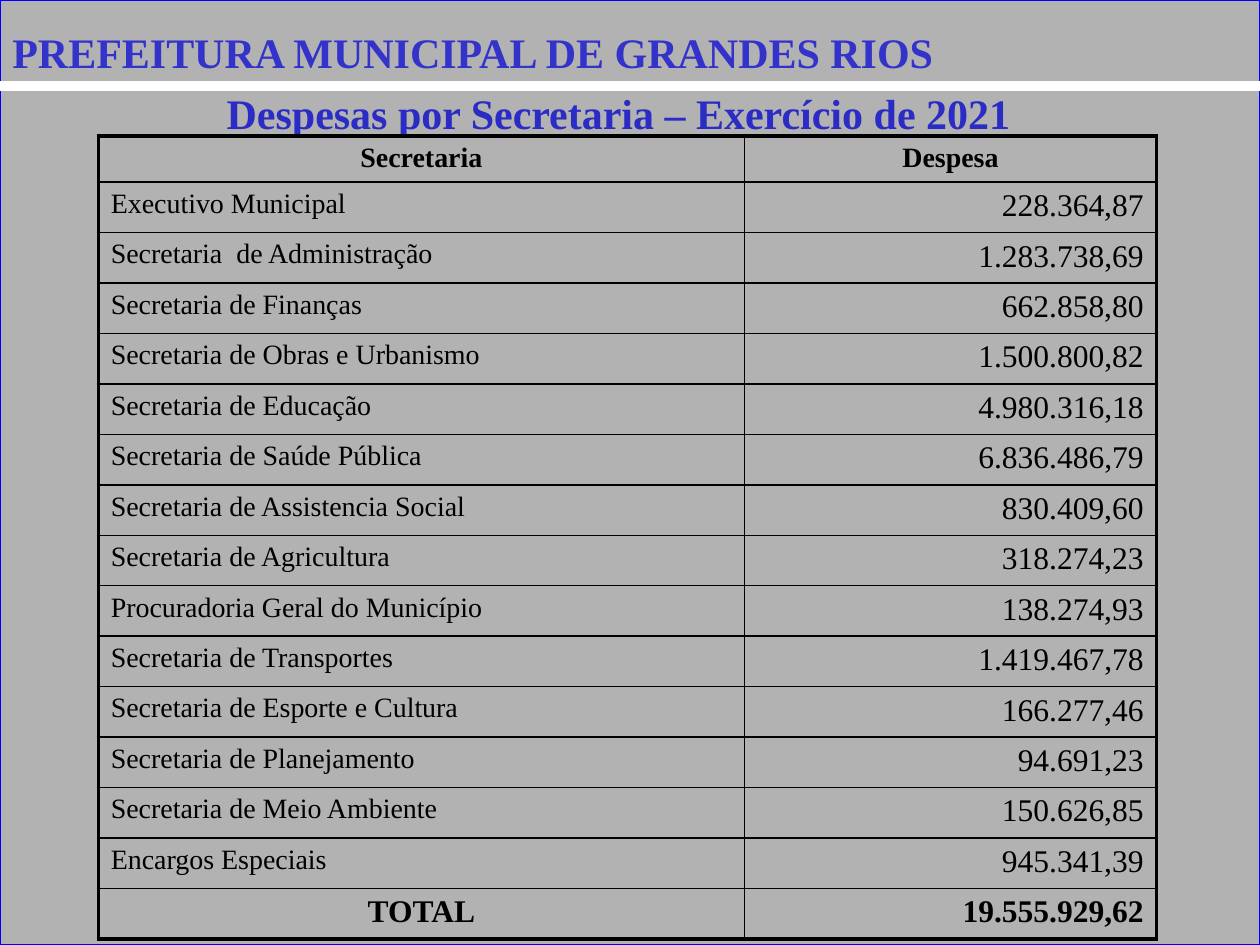
from lxml.etree import SubElement
from pptx import Presentation
from pptx.dml.color import RGBColor
from pptx.enum.shapes import MSO_CONNECTOR as Connector, MSO_SHAPE as Shape
from pptx.enum.text import PP_ALIGN as Align
from pptx.oxml.ns import qn
from pptx.util import Cm, Pt

HEADING = "PREFEITURA MUNICIPAL DE GRANDES RIOS"
SUBTITLE = "Despesas por Secretaria – Exercício de 2021 "
HEADER = ("Secretaria", "Despesa")
EXPENSES = [
    ("Executivo Municipal", "228.364,87"),
    ("Secretaria  de Administração", "1.283.738,69"),
    ("Secretaria de Finanças", "662.858,80"),
    ("Secretaria de Obras e Urbanismo", "1.500.800,82"),
    ("Secretaria de Educação", "4.980.316,18"),
    ("Secretaria de Saúde Pública", "6.836.486,79"),
    ("Secretaria de Assistencia Social", "830.409,60"),
    ("Secretaria de Agricultura", "318.274,23"),
    ("Procuradoria Geral do Município", "138.274,93"),
    ("Secretaria de Transportes", "1.419.467,78"),
    ("Secretaria de Esporte e Cultura", "166.277,46"),
    ("Secretaria de Planejamento", "94.691,23"),
    ("Secretaria de Meio Ambiente", "150.626,85"),
    ("Encargos Especiais", "945.341,39"),
]
TOTAL = ("TOTAL", "19.555.929,62")

FONT = "Times New Roman"
COLUMN_WIDTHS = (13.03, 8.3)
HEADER_HEIGHT, TABLE_HEIGHT = 0.93, 16.18
THIN, THICK = 1, 2.25


def color(hex_value):
    """Turn a hex string into a colour."""
    return RGBColor.from_string(hex_value)


def style(paragraph, size, hex_value, bold, align):
    """Set the font and alignment of a paragraph."""
    font = paragraph.font
    font.name, font.size, font.bold = FONT, Pt(size), bold
    font.color.rgb = color(hex_value)
    paragraph.alignment = align


def add_title(slide, text, left, top, width, hex_value, align):
    """Add a bold title line and return its run."""
    frame = slide.shapes.add_textbox(Cm(left), Cm(top), Cm(width), Cm(1.27)).text_frame
    frame.word_wrap = True
    frame.margin_top = Cm(0.2)
    paragraph = frame.paragraphs[0]
    run = paragraph.add_run()
    run.text = text
    style(paragraph, 24, hex_value, True, align)
    return run


def add_text_shadow(run):
    """Give the letters of a run a grey shadow to the lower right."""
    effects = SubElement(run.font._element, qn("a:effectLst"))
    shadow = SubElement(effects, qn("a:outerShdw"), dist="38100", dir="2700000", algn="tl")
    SubElement(shadow, qn("a:srgbClr"), val="808080")


def set_borders(cell, **widths):
    """Draw black cell borders; widths in points, keyed L, R, T and B."""
    properties = cell._tc.get_or_add_tcPr()
    for position, side in enumerate("LRTB"):
        line = SubElement(properties, qn(f"a:ln{side}"), w=str(Pt(widths[side])))
        fill = SubElement(line, qn("a:solidFill"))
        SubElement(fill, qn("a:srgbClr"), val="000000")
        properties.insert(position, line)


def add_expense_table(slide):
    """Add the table of expenses with its header and total."""
    rows = [HEADER, *EXPENSES, TOTAL]
    last = len(rows) - 1
    table = slide.shapes.add_table(
        len(rows), len(HEADER), Cm(1.98), Cm(2.74),
        Cm(sum(COLUMN_WIDTHS)), Cm(TABLE_HEIGHT)).table
    table.first_row = table.horz_banding = False
    for column, width in zip(table.columns, COLUMN_WIDTHS):
        column.width = Cm(width)
    row_height = (TABLE_HEIGHT - HEADER_HEIGHT) / last
    for r, values in enumerate(rows):
        table.rows[r].height = Cm(row_height if r else HEADER_HEIGHT)
        for c, value in enumerate(values):
            cell = table.cell(r, c)
            cell.text = value
            cell.fill.background()
            if r == 0 or (r == last and c == 0):
                align = Align.CENTER
            else:
                align = Align.RIGHT if c else Align.LEFT
            size = 18 if r == last or (r and c) else 16
            style(cell.text_frame.paragraphs[0], size, "000000", r in (0, last), align)
            set_borders(cell, L=THIN if c else THICK, R=THICK if c else THIN,
                        T=THIN if r else THICK, B=THICK if r == last else THIN)


deck = Presentation()
deck.slide_width, deck.slide_height = Cm(25.4), Cm(19.05)
slide = deck.slides.add_slide(deck.slide_layouts[6])

backdrop = slide.shapes.add_shape(Shape.RECTANGLE, 0, 0, deck.slide_width, deck.slide_height)
backdrop.shadow.inherit = False
backdrop.fill.solid()
backdrop.fill.fore_color.rgb = color("B2B2B2")
backdrop.line.color.rgb = color("0000FF")
backdrop.line.width = Pt(0.75)

add_title(slide, SUBTITLE, 0.61, 1.57, 23.93, "2B2BC5", Align.CENTER)

divider = slide.shapes.add_connector(
    Connector.STRAIGHT, 0, Cm(1.73), deck.slide_width, Cm(1.73))
divider.line.color.rgb = color("FFFFFF")
divider.line.width = Pt(6)
SubElement(divider._element.spPr, qn("a:effectLst"))

heading = add_title(slide, HEADING, 0, 0.33, 24.1, "3333CC", Align.LEFT)
add_text_shadow(heading)

add_expense_table(slide)

deck.save("out.pptx")
